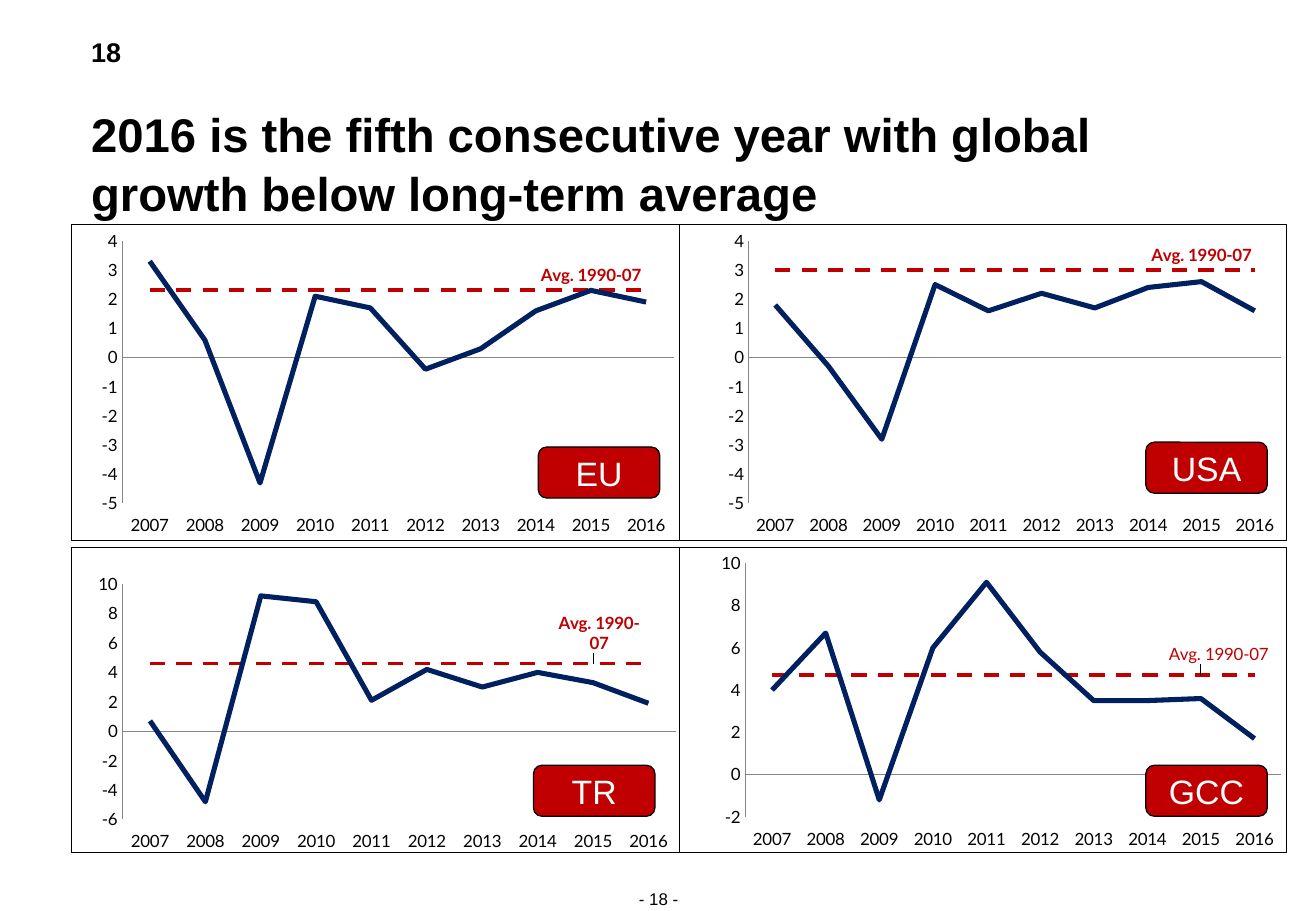
"""Build a slide with four line charts of growth against the long-term average."""
from lxml import etree
from pptx import Presentation
from pptx import util as u
from pptx.chart.data import CategoryChartData
from pptx.dml.color import RGBColor
from pptx.enum import chart as charts, dml, shapes, text
from pptx.oxml import ns

BLACK = RGBColor(0, 0, 0)
WHITE = RGBColor(255, 255, 255)
RED = RGBColor(0xC0, 0, 0)
NAVY = RGBColor(0, 0x20, 0x60)
GREY = RGBColor(0x86, 0x86, 0x86)


def write(frame, words, **font):
    for side in ("left", "top", "right", "bottom"):
        setattr(frame, f"margin_{side}", 0)
    frame.word_wrap = True
    frame.text = words
    para = frame.paragraphs[0]
    align = font.pop("align", text.PP_ALIGN.LEFT)
    para.alignment = align
    para.font.name = "Arial"
    para.font.color.rgb = font.pop("color", BLACK)
    for key, value in font.items():
        setattr(para.font, key, value)


def set_layout(parent, position, **values):
    for old in parent.findall(ns.qn("c:layout")):
        parent.remove(old)
    layout = etree.Element(ns.qn("c:layout"))
    manual = etree.SubElement(layout, ns.qn("c:manualLayout"))
    for key, value in values.items():
        etree.SubElement(manual, ns.qn(f"c:{key}")).set("val", str(value))
    parent.insert(position, layout)


deck = Presentation()
deck.slide_width, deck.slide_height = u.Inches(10.83), u.Inches(7.5)
page = deck.slides.add_slide(deck.slide_layouts[5])

title = page.shapes.title
title.left, title.top, title.width, title.height = map(u.Inches, (0.75, 0.84, 9.33, 0.94))
write(title.text_frame, "2016 is the fifth consecutive year with global growth below long-term average",
      size=u.Pt(28), bold=True)
title.text_frame.vertical_anchor = text.MSO_ANCHOR.TOP
title.text_frame.paragraphs[0].line_spacing = 1.05

for words, place, font in (
    ("18", (0.75, 0.29, 0.3, 0.27), {"size": u.Pt(16), "bold": True}),
    ("- 18 -", (4.85, 7.32, 1.14, 0.17), {"size": u.Pt(10), "align": text.PP_ALIGN.CENTER}),
):
    write(page.shapes.add_textbox(*map(u.Inches, place)).text_frame, words, **font)

years = [str(year) for year in range(2007, 2017)]
panels = [
    {"name": "EU", "frame": (0.59, 1.85, 5, 2.6), "chart": (0.59, 1.85, 5, 2.6),
     "badge": (4.43, 3.68), "scale": (-5, 4, 1), "average": 2.3,
     "growth": (3.3, 0.6, -4.3, 2.1, 1.7, -0.4, 0.3, 1.6, 2.3, 1.9)},
    {"name": "USA", "frame": (5.59, 1.85, 5, 2.6), "chart": (5.76, 1.85, 4.83, 2.6),
     "badge": (9.43, 3.64), "scale": (-5, 4, 1), "average": 3,
     "growth": (1.8, -0.3, -2.8, 2.5, 1.6, 2.2, 1.7, 2.4, 2.6, 1.6)},
    {"name": "TR", "frame": (0.59, 4.51, 5, 2.51), "chart": (0.59, 4.69, 5.02, 2.33),
     "badge": (4.39, 6.3), "scale": (-6, 10, 2), "average": 4.6, "shift": (0.01, -0.02),
     "growth": (0.7, -4.8, 9.2, 8.8, 2.1, 4.2, 3, 4, 3.3, 1.9)},
    {"name": "GCC", "frame": (5.59, 4.51, 5, 2.51), "chart": (5.73, 4.51, 4.86, 2.51),
     "badge": (9.43, 6.3), "scale": (-2, 10, 2), "average": 4.7, "shift": (0.03, -0.02),
     "growth": (4, 6.7, -1.2, 6, 9.1, 5.8, 3.5, 3.5, 3.6, 1.7)},
]

for panel in panels:
    data = CategoryChartData()
    data.categories = years
    data.add_series("Avg. 1990-07", [panel["average"]] * len(years))
    data.add_series("Series 2", panel["growth"])
    chart = page.shapes.add_chart(charts.XL_CHART_TYPE.LINE, *map(u.Inches, panel["chart"]), data).chart
    chart.has_legend = chart.has_title = False
    chart.font.name, chart.font.size, chart.font.color.rgb = "Lato", u.Pt(10), BLACK
    chart.plots[0].vary_by_categories = False
    plot_area = chart.plots[0]._element.getparent()
    set_layout(plot_area, 0, layoutTarget="inner", xMode="edge", yMode="edge",
               x=0.083, y=0.051, w=0.908, h=0.832)

    values = chart.value_axis
    values.minimum_scale, values.maximum_scale, values.major_unit = panel["scale"]
    values.tick_labels.number_format = "#,##0"
    values.tick_labels.number_format_is_linked = False
    chart.category_axis.tick_label_position = charts.XL_TICK_LABEL_POSITION.LOW
    for axis in (values, chart.category_axis):
        axis.has_major_gridlines = False
        axis.major_tick_mark = axis.minor_tick_mark = charts.XL_TICK_MARK.NONE
        axis.format.line.color.rgb = GREY
        axis.format.line.width = u.Pt(0.75)

    average, growth = chart.plots[0].series
    for series, color, width in ((average, RED, 2.25), (growth, NAVY, 3)):
        series.smooth = False
        series.marker.style = charts.XL_MARKER_STYLE.NONE
        series.format.line.color.rgb = color
        series.format.line.width = u.Pt(width)
    average.format.line.dash_style = dml.MSO_LINE.DASH

    label = average.points[8].data_label
    label.font.size, label.font.bold = u.Pt(10), panel["name"] != "GCC"
    label.font.color.rgb = RED
    label.position = charts.XL_LABEL_POSITION.ABOVE
    average.data_labels.show_value = False
    point_label = average._element.xpath(".//c:dLbl")[0]
    point_label.find(ns.qn("c:showVal")).set("val", "0")
    point_label.find(ns.qn("c:showSerName")).set("val", "1")
    if "shift" in panel:
        set_layout(point_label, 1, x=panel["shift"][0], y=panel["shift"][1])

for panel in panels:
    frame = page.shapes.add_shape(shapes.MSO_SHAPE.RECTANGLE, *map(u.Inches, panel["frame"]))
    frame.fill.background()
    badge = page.shapes.add_shape(shapes.MSO_SHAPE.ROUNDED_RECTANGLE,
                                  *map(u.Inches, (*panel["badge"], 1, 0.42)))
    badge.fill.solid()
    badge.fill.fore_color.rgb = RED
    write(badge.text_frame, panel["name"], size=u.Pt(20), color=WHITE, align=text.PP_ALIGN.CENTER)
    badge.text_frame.vertical_anchor = text.MSO_ANCHOR.MIDDLE
    for shape in (frame, badge):
        shape.shadow.inherit = False
        shape.line.color.rgb = BLACK
        shape.line.width = u.Pt(0.75)

deck.save("out.pptx")
